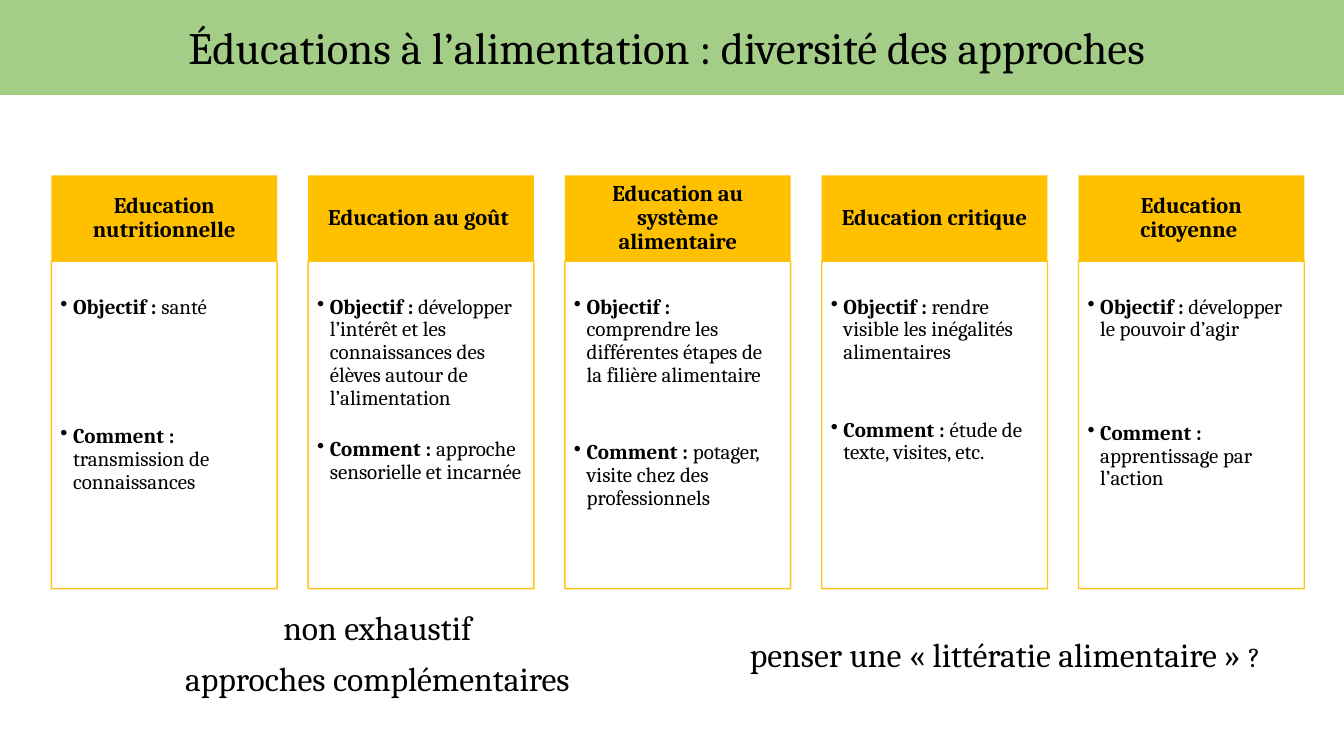
from lxml.etree import SubElement
from pptx import Presentation
from pptx.dml.color import RGBColor
from pptx.enum.shapes import MSO_SHAPE
from pptx.enum.text import MSO_ANCHOR, MSO_AUTO_SIZE, PP_ALIGN
from pptx.oxml.ns import qn
from pptx.util import Pt

COLORS = {"banner": "A0CC82", "card": "FFC000", "text": "000000"}
FONT = "Cambria"
LINE_SPACING = 0.9
BLANK_LINE = 18.5

APPROACHES = [
    ("Education nutritionnelle", "santé", "transmission de connaissances", 4),
    ("Education au goût ",
     "développer l’intérêt et les connaissances des élèves autour de l’alimentation",
     "approche sensorielle et incarnée", 1),
    ("Education au système alimentaire",
     "comprendre les différentes étapes de la filière alimentaire",
     "potager, visite chez des professionnels", 2),
    ("Education critique", "rendre visible les inégalités alimentaires",
     "étude de texte, visites, etc.", 2),
    ("Education citoyenne ", "développer le pouvoir d’agir",
     "apprentissage par l’action", 3),
]


def color(name):
    return RGBColor.from_string(COLORS[name])


def place(shape, box):
    shape.left, shape.top, shape.width, shape.height = [Pt(length) for length in box]


def set_opacity(shape, percent):
    for tint in shape.element.spPr.iter(qn("a:srgbClr")):
        SubElement(tint, qn("a:alpha")).set("val", str(percent * 1000))


def set_frame(shape, insets, anchor):
    frame = shape.text_frame
    frame.word_wrap = True
    frame.auto_size = MSO_AUTO_SIZE.NONE
    frame.vertical_anchor = anchor
    (frame.margin_left, frame.margin_top,
     frame.margin_right, frame.margin_bottom) = [Pt(inset) for inset in insets]
    return frame


def add_run(paragraph, text, size, bold=False):
    run = paragraph.add_run()
    run.text = text
    run.font.name = FONT
    run.font.size = Pt(size)
    run.font.bold = bold
    run.font.color.rgb = color("text")


def add_rectangle(slide, box):
    shape = slide.shapes.add_shape(MSO_SHAPE.RECTANGLE, *[Pt(length) for length in box])
    shape.shadow.inherit = False
    return shape


def build_banner(slide, box):
    title = slide.shapes.title
    place(title, box)
    title.fill.solid()
    title.fill.fore_color.rgb = color("banner")
    set_opacity(title, 95)
    title.line.color.rgb = color("banner")
    title.line.width = Pt(2)
    frame = set_frame(title, (7.2, 3.6, 7.2, 3.6), MSO_ANCHOR.MIDDLE)
    paragraph = frame.paragraphs[0]
    paragraph.alignment = PP_ALIGN.CENTER
    add_run(paragraph, "Éducations à l’alimentation : diversité des approches ", 32)


def add_bullet(paragraph, label, text, space_before):
    properties = paragraph._p.get_or_add_pPr()
    properties.set("marL", str(Pt(9)))
    properties.set("indent", str(-Pt(9)))
    SubElement(properties, qn("a:buChar")).set("char", "•")
    paragraph.alignment = PP_ALIGN.LEFT
    paragraph.line_spacing = LINE_SPACING
    paragraph.space_before = Pt(space_before)
    paragraph.space_after = Pt(2.25)
    add_run(paragraph, label, 15, bold=True)
    add_run(paragraph, text, 15)


def build_card(slide, box, heading, goal, method, blank_lines):
    left, top, width, height = box
    header_height = 61.2

    header = add_rectangle(slide, (left, top, width, header_height))
    header.fill.solid()
    header.fill.fore_color.rgb = color("card")
    header.line.fill.background()
    frame = set_frame(header, (8.6, 5, 8.6, 5), MSO_ANCHOR.MIDDLE)
    paragraph = frame.paragraphs[0]
    paragraph.alignment = PP_ALIGN.CENTER
    paragraph.line_spacing = LINE_SPACING
    add_run(paragraph, heading, 16, bold=True)

    body = add_rectangle(slide, (left, top + header_height, width, height - header_height))
    body.fill.background()
    body.line.color.rgb = color("card")
    body.line.width = Pt(1)
    set_opacity(body, 90)
    frame = set_frame(body, (6.5, 25, 8.6, 9.4), MSO_ANCHOR.TOP)
    add_bullet(frame.paragraphs[0], "Objectif : ", goal, 0)
    add_bullet(frame.add_paragraph(), "Comment : ", method, blank_lines * BLANK_LINE)


def build_cards(slide, box):
    left, top, width, height = box
    card_width = 161.3
    pitch = (width - card_width) / (len(APPROACHES) - 1)
    for index, approach in enumerate(APPROACHES):
        build_card(slide, (left + index * pitch, top, card_width, height), *approach)


def build_remarks(slide, box):
    subtitle = slide.placeholders[1]
    place(subtitle, box)
    frame = set_frame(subtitle, (0, 0, 0, 0), MSO_ANCHOR.TOP)
    for index, text in enumerate(("non exhaustif", "approches complémentaires")):
        paragraph = frame.add_paragraph() if index else frame.paragraphs[0]
        paragraph.alignment = PP_ALIGN.CENTER
        paragraph.line_spacing = LINE_SPACING
        paragraph.space_before = Pt(10 if index else 0)
        add_run(paragraph, text, 24)


def build_question(slide, box):
    question = slide.shapes.add_textbox(*[Pt(length) for length in box])
    frame = set_frame(question, (7.2, 3.6, 7.2, 3.6), MSO_ANCHOR.TOP)
    paragraph = frame.paragraphs[0]
    add_run(paragraph, "penser une « littératie alimentaire » ", 24)
    add_run(paragraph, "?", 20)


def main():
    presentation = Presentation()
    presentation.slide_width = Pt(960)
    presentation.slide_height = Pt(540)
    slide = presentation.slides.add_slide(presentation.slide_layouts[0])
    build_banner(slide, (0, 0, 960, 67))
    build_cards(slide, (36.7, 125.3, 895, 295.2))
    build_remarks(slide, (83.5, 437, 372.2, 103))
    build_question(slide, (528.5, 449.3, 409, 57.6))
    presentation.save("out.pptx")


if __name__ == "__main__":
    main()
